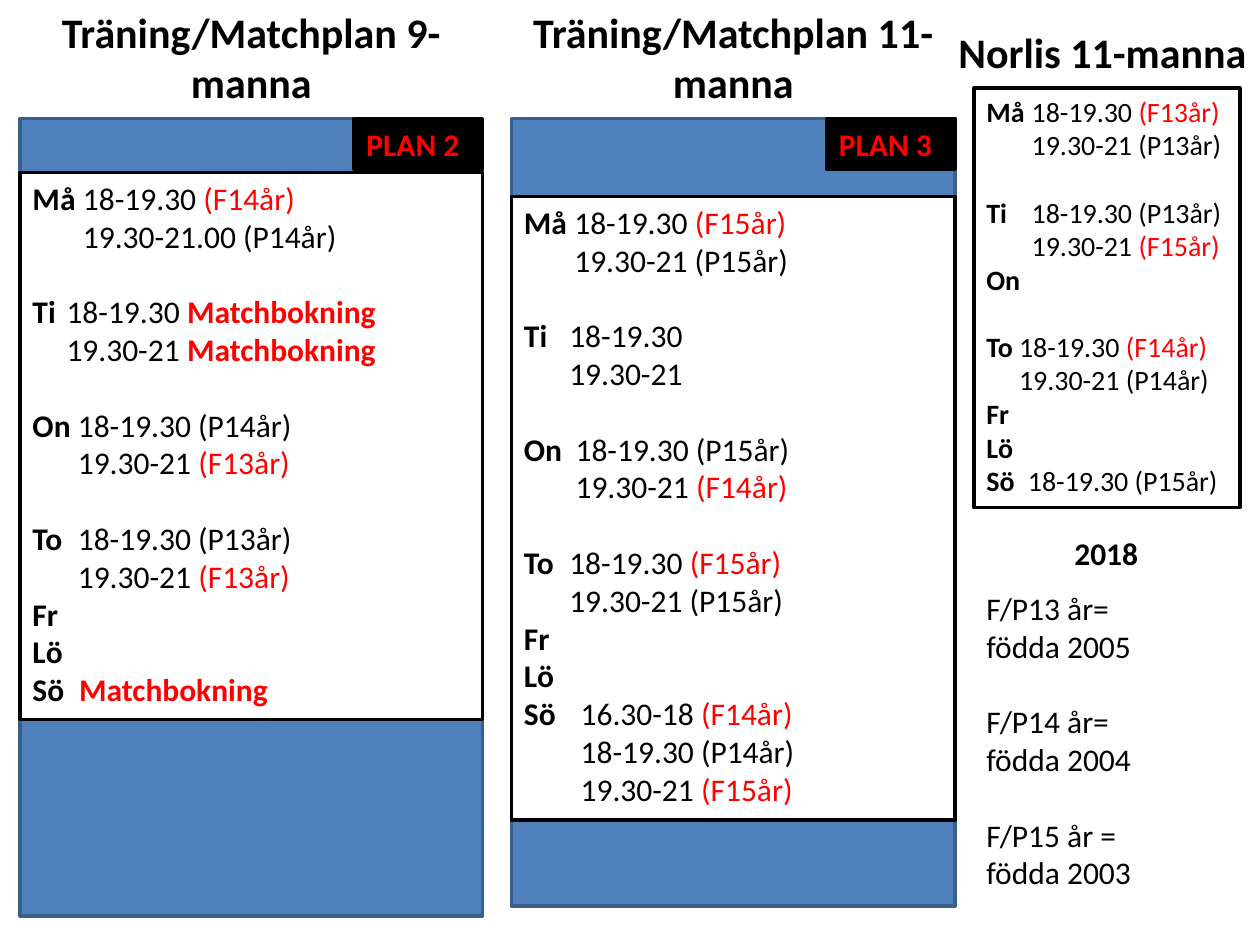
from dataclasses import dataclass

from pptx import Presentation
from pptx.dml.color import RGBColor
from pptx.enum.shapes import MSO_SHAPE as Shape
from pptx.enum.text import MSO_ANCHOR as Anchor, PP_ALIGN as Align
from pptx.util import Inches, Pt


@dataclass(frozen=True)
class Theme:
    """Colours and type sizes of the slide."""
    font: str = "Calibri"
    black: str = "000000"
    white: str = "FFFFFF"
    red: str = "FF0000"
    field: str = "4F81BD"
    field_line: str = "3A5F8C"
    heading: int = 24
    body: int = 18
    small: int = 16
    line_width: int = 2
    line_height: float = 1.2


THEME = Theme()
BOOKING = "Matchbokning"
FREE_DAYS = [("Fr", 0, False, []), ("Lö", 0, False, [])]

NINE_DAYS = [
    ("Må", 0.4, False, [("18-19.30", "(F14år)"), ("19.30-21.00", "(P14år)")]),
    ("Ti", 0.27, True, [("18-19.30", BOOKING), ("19.30-21", BOOKING)]),
    ("On", 0.36, True, [("18-19.30", "(P14år)"), ("19.30-21", "(F13år)")]),
    ("To", 0.36, True, [("18-19.30", "(P13år)"), ("19.30-21", "(F13år)")]),
    *FREE_DAYS,
    ("Sö", 0.37, False, [("", BOOKING)]),
]
ELEVEN_DAYS = [
    ("Må", 0.4, False, [("18-19.30", "(F15år)"), ("19.30-21", "(P15år)")]),
    ("Ti", 0.36, True, [("18-19.30", ""), ("19.30-21", "")]),
    ("On", 0.41, True, [("18-19.30", "(P15år)"), ("19.30-21", "(F14år)")]),
    ("To", 0.36, True, [("18-19.30", "(F15år)"), ("19.30-21", "(P15år)")]),
    *FREE_DAYS,
    ("Sö", 0.45, False, [("16.30-18", "(F14år)"), ("18-19.30", "(P14år)"),
                         ("19.30-21", "(F15år)")]),
]
GUEST_DAYS = [
    ("Må", 0.36, False, [("18-19.30", "(F13år)"), ("19.30-21", "(P13år)")]),
    ("Ti", 0.36, True, [("18-19.30", "(P13år)"), ("19.30-21", "(F15år)")]),
    ("On", 0, False, []),
    ("To", 0.26, True, [("18-19.30", "(F14år)"), ("19.30-21", "(P14år)")]),
    *FREE_DAYS,
    ("Sö", 0.33, False, [("18-19.30", "(P15år)")]),
]
BIRTH_YEARS = [("F/P13 år=", "födda 2005"), ("F/P14 år=", "födda 2004"),
               ("F/P15 år =", "födda 2003")]


def add_text(paragraph, text, size=THEME.body, color=THEME.black, bold=False):
    """Append one formatted run to a paragraph."""
    run = paragraph.add_run()
    run.text = text
    run.font.name = THEME.font
    run.font.size = Pt(size)
    run.font.bold = bold
    run.font.color.rgb = RGBColor.from_string(color)


def next_paragraph(frame, align=Align.LEFT, before=0):
    """Return the unused first paragraph of a frame or a new one."""
    first = frame.paragraphs[0]
    paragraph = frame.add_paragraph() if first.runs else first
    paragraph.alignment = align
    paragraph.space_before = Pt(before)
    return paragraph


def add_box(slide, box, fill, line):
    """Draw an outlined rectangle and return its text frame."""
    shape = slide.shapes.add_shape(Shape.RECTANGLE, *map(Inches, box))
    shape.shadow.inherit = False
    shape.fill.solid()
    shape.fill.fore_color.rgb = RGBColor.from_string(fill)
    shape.line.color.rgb = RGBColor.from_string(line)
    shape.line.width = Pt(THEME.line_width)
    frame = shape.text_frame
    frame.vertical_anchor = Anchor.TOP
    frame.word_wrap = True
    return frame


def add_text_frame(slide, box):
    """Add a wrapping text box and return its text frame."""
    frame = slide.shapes.add_textbox(*map(Inches, box)).text_frame
    frame.word_wrap = True
    return frame


def add_heading(slide, box, text):
    """Place a centred heading in the box."""
    paragraph = next_paragraph(add_text_frame(slide, box), Align.CENTER)
    add_text(paragraph, text, size=THEME.heading, bold=True)


def add_schedule(slide, box, days, size=THEME.body):
    """List each day with its times hanging at the day's indent."""
    frame = add_box(slide, box, THEME.white, THEME.black)
    for day, indent, gap, slots in days:
        for index, (time, group) in enumerate(slots or [("", "")]):
            starts_day = index == 0
            before = size * THEME.line_height if gap and starts_day else 0
            paragraph = next_paragraph(frame, before=before)
            properties = paragraph._p.get_or_add_pPr()
            properties.set("marL", str(Inches(indent)))
            properties.set("indent", str(-Inches(indent) if starts_day else 0))
            if starts_day:
                add_text(paragraph, day + "\t" if slots else day, size, bold=True)
            if time:
                add_text(paragraph, time + " " if group else time, size)
            if group:
                booked = group == BOOKING
                color = THEME.red if booked or "F" in group else THEME.black
                add_text(paragraph, group, size, color, booked)


def add_field(slide, box, heading, heading_height, label, schedule_box, days):
    """Draw a pitch with its heading, corner label and schedule."""
    left, top, width, _ = box
    label_width = 1.02
    add_box(slide, box, THEME.field, THEME.field_line)
    add_heading(slide, (left, 0, width, heading_height), heading)
    add_schedule(slide, schedule_box, days)
    frame = add_box(slide, (left + width - label_width, top, label_width, 0.4),
                    THEME.black, THEME.black)
    add_text(next_paragraph(frame), label, color=THEME.red, bold=True)


def add_legend(slide, box):
    """Explain the birth year of each age group."""
    frame = add_text_frame(slide, box)
    add_text(next_paragraph(frame, Align.CENTER), "2018", bold=True)
    for index, (group, born) in enumerate(BIRTH_YEARS):
        before = (THEME.body if index else 8) * THEME.line_height
        add_text(next_paragraph(frame, before=before), group)
        add_text(next_paragraph(frame), born)


def main():
    """Build and save the training schedule."""
    presentation = Presentation()
    presentation.slide_width = Inches(10)
    presentation.slide_height = Inches(7.5)
    slide = presentation.slides.add_slide(presentation.slide_layouts[6])
    add_field(slide, (0.16, 0.94, 3.67, 6.33), "Träning/Matchplan 9-manna", 0.91,
              "PLAN 2", (0.16, 1.37, 3.67, 4.34), NINE_DAYS)
    add_field(slide, (4.06, 0.94, 3.52, 6.25), "Träning/Matchplan 11-manna", 0.94,
              "PLAN 3", (4.06, 1.56, 3.52, 4.95), ELEVEN_DAYS)
    add_heading(slide, (7.11, 0.16, 3.28, 0.5), "Norlis 11-manna")
    add_schedule(slide, (7.73, 0.7, 2.11, 3.33), GUEST_DAYS, THEME.small)
    add_legend(slide, (7.73, 4.19, 2.1, 3.26))
    presentation.save("out.pptx")


if __name__ == "__main__":
    main()
